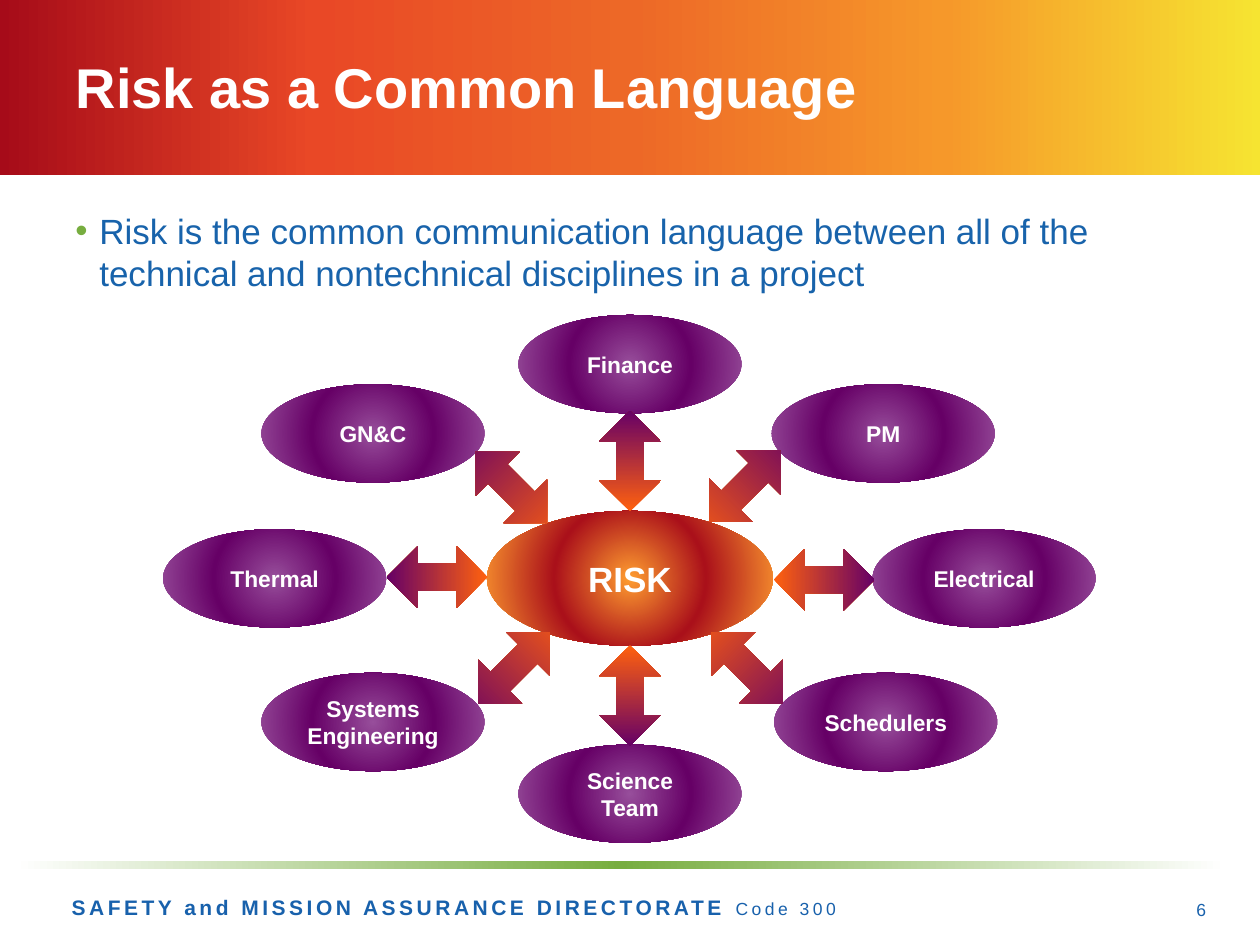
import pptx
import pptx.util
import pptx.oxml
import pptx.oxml.ns
import pptx.dml.color
import pptx.enum.shapes
import pptx.enum.text
from pptx.util import Inches

COLORS = {
    "white": "FFFFFF", "text": "1863AB", "footer": "1861AC", "green": "77AD3F",
    "lilac": "974E9B", "purple": "660066", "amber": "FF9D30", "crimson": "AA101A",
    "orange": "FF610E", "dark_red": "A60B19", "red": "E94826",
    "rust": "ED6827", "gold": "F6982A", "yellow": "F6E431",
}
BANNER = [(0, "dark_red"), (25, "red"), (50, "rust"), (75, "gold"), (100, "yellow")]
RULE = [(0, "white"), (50, "green"), (100, "white")]
DISCIPLINE = [(0, "lilac"), (50, "purple"), (100, "lilac")]
HUB = [(0, "amber"), (48, "crimson"), (100, "amber")]
ARROW = [(0, "orange"), (100, "purple")]

CENTER_X, CENTER_Y = 5.0, 4.59
SPOKES = [
    ("Finance", 0, (0, -1.7), (0, -0.93)),
    ("PM", 45, (2.01, -1.15), (0.91, -0.73)),
    ("Electrical", 90, (2.81, 0), (1.54, 0.01)),
    ("Schedulers", 135, (2.03, 1.14), (0.93, 0.71)),
    ("Science Team", 180, (0, 1.71), (0, 0.93)),
    ("Systems Engineering", 225, (-2.04, 1.14), (-0.92, 0.71)),
    ("Thermal", 270, (-2.82, 0), (-1.53, -0.01)),
    ("GN&C", 315, (-2.04, -1.15), (-0.94, -0.72)),
]

SHAPES = pptx.enum.shapes.MSO_SHAPE
ALIGN = pptx.enum.text.PP_ALIGN
MIDDLE = pptx.enum.text.MSO_ANCHOR.MIDDLE


class SlideBuilder:
    font_name = "Arial"

    def __init__(self, slide):
        self.slide = slide

    def style(self, font, size, color, bold=False):
        font.name = self.font_name
        font.size = pptx.util.Pt(size)
        font.bold = bold
        font.color.rgb = pptx.dml.color.RGBColor.from_string(COLORS[color])

    def gradient(self, shape, stops, angle=None):
        stop_xml = "".join(
            f'<a:gs pos="{position * 1000}"><a:srgbClr val="{COLORS[color]}"/></a:gs>'
            for position, color in stops)
        if angle is None:
            direction = ('<a:path path="circle"><a:fillToRect l="50000" t="50000" '
                         'r="50000" b="50000"/></a:path>')
        else:
            direction = f'<a:lin ang="{angle * 60000}" scaled="0"/>'
        shape.fill.background()
        properties = shape._element.spPr
        empty_fill = properties.find(pptx.oxml.ns.qn("a:noFill"))
        properties.replace(empty_fill, pptx.oxml.parse_xml(
            f'<a:gradFill {pptx.oxml.ns.nsdecls("a")} rotWithShape="1">'
            f'<a:gsLst>{stop_xml}</a:gsLst>{direction}</a:gradFill>'))

    def shape(self, kind, left, top, width, height, stops, angle=None):
        shape = self.slide.shapes.add_shape(
            kind, Inches(left), Inches(top), Inches(width), Inches(height))
        shape.shadow.inherit = False
        shape.line.fill.background()
        self.gradient(shape, stops, angle)
        return shape

    def banner(self, height):
        banner = self.shape(SHAPES.RECTANGLE, 0, 0, 10, height, BANNER, 0)
        self.slide.shapes._spTree.insert(2, banner._element)

    def title(self, text, left, top, width, height):
        title = self.slide.shapes.title
        title.left, title.top = Inches(left), Inches(top)
        title.width, title.height = Inches(width), Inches(height)
        title.text_frame.text = text
        title.text_frame.vertical_anchor = MIDDLE
        heading = title.text_frame.paragraphs[0]
        heading.alignment = ALIGN.LEFT
        heading.line_spacing = 0.9
        self.style(heading.font, 32, "white", True)

    def text(self, left, top, width, height):
        box = self.slide.shapes.add_textbox(
            Inches(left), Inches(top), Inches(width), Inches(height))
        box.text_frame.word_wrap = True
        return box.text_frame

    def bullet(self, text, left, top, width, height):
        paragraph = self.text(left, top, width, height).paragraphs[0]
        paragraph.text = text
        paragraph.space_before = pptx.util.Pt(4)
        self.style(paragraph.font, 20, "text")
        properties = paragraph._p.get_or_add_pPr()
        properties.set("marL", str(Inches(0.19)))
        properties.set("indent", str(Inches(-0.19)))
        namespace = pptx.oxml.ns.nsdecls("a")
        bullet_parts = [
            f'<a:buClr {namespace}><a:srgbClr val="{COLORS["green"]}"/></a:buClr>',
            f'<a:buFont {namespace} typeface="{self.font_name}"/>',
            f'<a:buChar {namespace} char="•"/>',
        ]
        defaults = properties.find(pptx.oxml.ns.qn("a:defRPr"))
        for part in bullet_parts:
            defaults.addprevious(pptx.oxml.parse_xml(part))

    def footer(self, parts, left, top, width, height):
        paragraph = self.text(left, top, width, height).paragraphs[0]
        for text, size, bold in parts:
            run = paragraph.add_run()
            run.text = text
            self.style(run.font, size, "footer", bold)
            run._r.get_or_add_rPr().set("spc", "200")

    def page_number(self, number, left, top, width, height):
        frame = self.text(left, top, width, height)
        frame.vertical_anchor = MIDDLE
        paragraph = frame.paragraphs[0]
        paragraph.text = number
        paragraph.alignment = ALIGN.RIGHT
        self.style(paragraph.font, 10, "footer")

    def oval(self, text, offset, width, height, stops, size):
        left = CENTER_X + offset[0] - width / 2
        top = CENTER_Y + offset[1] - height / 2
        frame = self.shape(SHAPES.OVAL, left, top, width, height, stops).text_frame
        frame.word_wrap = True
        frame.vertical_anchor = MIDDLE
        frame.margin_left = frame.margin_right = Inches(0.07)
        paragraph = frame.paragraphs[0]
        paragraph.text = text
        paragraph.alignment = ALIGN.CENTER
        self.style(paragraph.font, size, "white", True)

    def arrow(self, offset, rotation):
        width, height = 0.49, 0.8
        arrow = self.shape(SHAPES.UP_DOWN_ARROW, CENTER_X + offset[0] - width / 2,
                           CENTER_Y + offset[1] - height / 2, width, height, ARROW, 270)
        arrow.rotation = rotation
        arrow.adjustments[0] = 0.5
        arrow.adjustments[1] = 0.44


def main():
    deck = pptx.Presentation()
    deck.slide_width, deck.slide_height = Inches(10), Inches(7.5)
    builder = SlideBuilder(deck.slides.add_slide(deck.slide_layouts[5]))

    builder.banner(1.39)
    builder.title("Risk as a Common Language", 0.5, 0.13, 9, 1.17)
    builder.footer([("SAFETY and MISSION ASSURANCE DIRECTORATE ", 12, True),
                    ("Code 300", 10, False)], 0.47, 7.05, 8.25, 0.3)
    builder.shape(SHAPES.RECTANGLE, 0.12, 6.83, 9.61, 0.07, RULE, 0)
    builder.bullet("Risk is the common communication language between all of the "
                   "technical and nontechnical disciplines in a project", 0.5, 1.61, 9, 0.8)
    builder.page_number("6", 9.24, 7.02, 0.43, 0.4)

    builder.oval("RISK", (0, 0), 2.27, 1.07, HUB, 20)
    for name, _, oval_offset, _ in SPOKES:
        builder.oval(name, oval_offset, 1.77, 0.78, DISCIPLINE, 13)
    for _, rotation, _, arrow_offset in SPOKES:
        builder.arrow(arrow_offset, rotation)

    deck.save("out.pptx")


if __name__ == "__main__":
    main()
